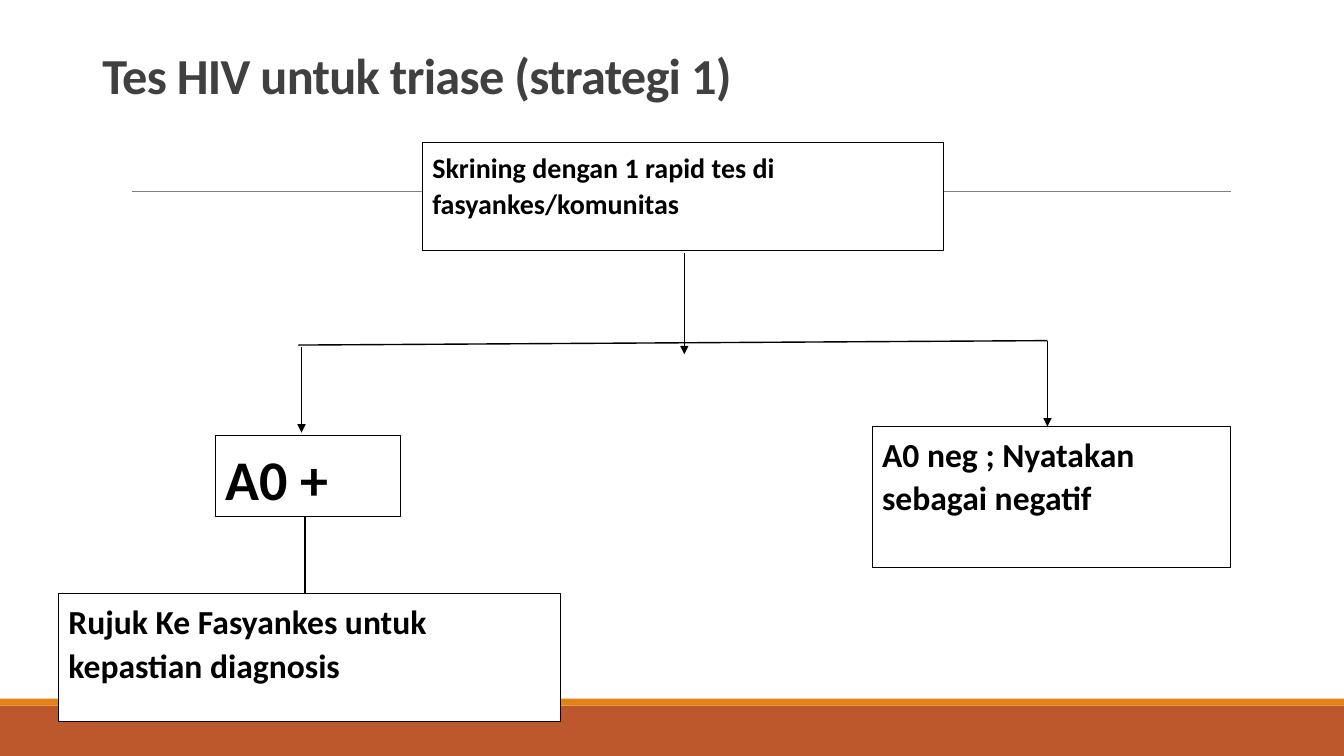
from lxml import etree
from pptx import Presentation
from pptx import util as u
from pptx.dml.color import RGBColor
from pptx.enum import shapes, text
from pptx.oxml import ns

WHITE = RGBColor(0xFF, 0xFF, 0xFF)
BLACK = RGBColor(0x00, 0x00, 0x00)
GREY = RGBColor(0x80, 0x80, 0x80)
DARK = RGBColor(0x40, 0x40, 0x40)
RUST = RGBColor(0xBD, 0x58, 0x2C)
ORANGE = RGBColor(0xE4, 0x83, 0x12)

WIDTH, HEIGHT = 960, 540


class FlowSlide:
    """Holds the style and the slide being drawn; lengths are in points."""

    font = "Calibri"
    outline = 0.5
    arrow = 1

    def __init__(self, deck):
        self.page = deck.slides.add_slide(deck.slide_layouts[6])

    def rect(self, left, top, width, height, fill):
        box = self.page.shapes.add_shape(
            shapes.MSO_SHAPE.RECTANGLE,
            u.Pt(left), u.Pt(top), u.Pt(width), u.Pt(height))
        box.shadow.inherit = False
        box.fill.solid()
        box.fill.fore_color.rgb = fill
        box.line.fill.background()
        return box

    def label(self, box, words, size, color, spacing, after=0,
              anchor=text.MSO_ANCHOR.TOP):
        frame = box.text_frame
        frame.word_wrap = True
        frame.vertical_anchor = anchor
        para = frame.paragraphs[0]
        para.alignment = text.PP_ALIGN.LEFT
        para.line_spacing = spacing
        para.space_after = u.Pt(after)
        para.font.name = self.font
        para.font.size = u.Pt(size)
        para.font.bold = True
        para.font.color.rgb = color
        span = para.add_run()
        span.text = words
        return span

    def step(self, left, top, width, height, words, size):
        box = self.rect(left, top, width, height, WHITE)
        box.line.color.rgb = BLACK
        box.line.width = u.Pt(self.outline)
        self.label(box, words, size, BLACK, spacing=1.07, after=8)

    def line(self, x1, y1, x2, y2, color=BLACK, weight=arrow, head=False):
        link = self.page.shapes.add_connector(
            shapes.MSO_CONNECTOR.STRAIGHT,
            u.Pt(x1), u.Pt(y1), u.Pt(x2), u.Pt(y2))
        link.line.color.rgb = color
        link.line.width = u.Pt(weight)
        properties = link._element.spPr
        if head:
            etree.SubElement(properties.find(ns.qn("a:ln")),
                             ns.qn("a:tailEnd"), type="triangle")
        etree.SubElement(properties, ns.qn("a:effectLst"))

    def title(self, left, top, width, height, words):
        box = self.page.shapes.add_textbox(
            u.Pt(left), u.Pt(top), u.Pt(width), u.Pt(height))
        span = self.label(box, words, 36, DARK, spacing=0.85,
                          anchor=text.MSO_ANCHOR.BOTTOM)
        span._r.get_or_add_rPr().set("spc", "-50")


def main():
    deck = Presentation()
    deck.slide_width, deck.slide_height = u.Pt(WIDTH), u.Pt(HEIGHT)
    slide = FlowSlide(deck)

    # Footer bands and title rule
    slide.rect(0, 504, WIDTH, 36, RUST)
    slide.rect(0, 499, WIDTH, 5, ORANGE)
    slide.line(94.3, 136.6, 879, 136.6, GREY, 0.5)

    # Screening and the fork to its two results
    slide.step(301.7, 102, 372, 77,
               "Skrining dengan 1 rapid tes di fasyankes/komunitas", 20)
    slide.line(488.8, 181, 488.8, 253, head=True)
    slide.line(213.2, 246.5, 748.2, 243.3)
    slide.line(215.4, 247.7, 215.4, 309, head=True)
    slide.line(748.2, 243.3, 748.2, 304.6, head=True)

    # Results and referral
    slide.step(153.8, 311, 132, 58, "A0 +", 40)
    slide.step(623, 304.6, 255.6, 100.8,
               "A0 neg ; Nyatakan sebagai negatif", 24)
    slide.line(218, 369, 218, 430.5, head=True)
    slide.step(41.8, 424, 358.6, 91.4,
               "Rujuk Ke Fasyankes untuk kepastian diagnosis", 24)

    # Title
    slide.title(66, 28.8, 828, 49.7, "Tes HIV untuk triase (strategi 1)")

    deck.save("out.pptx")


if __name__ == "__main__":
    main()
